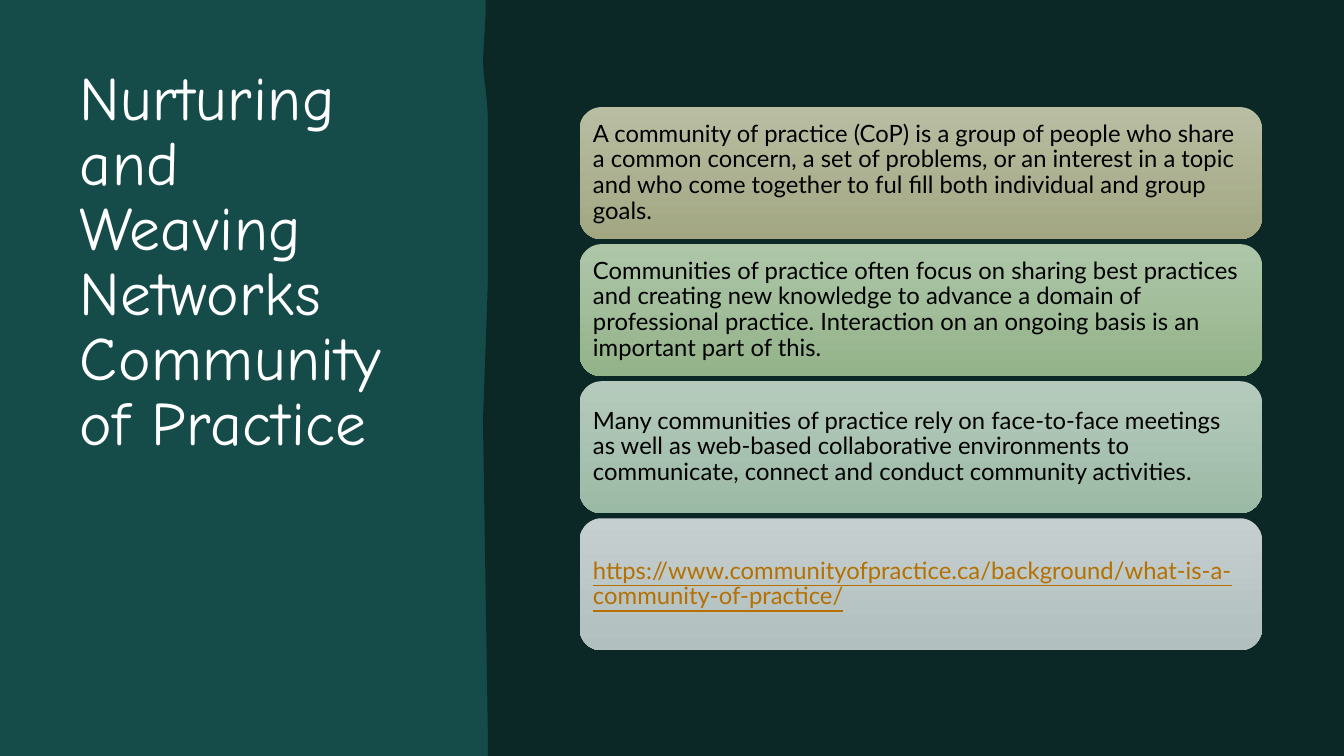
from pptx import Presentation
from pptx.dml.color import RGBColor
from pptx.enum import shapes, text
from pptx.util import Pt

WIDTH, HEIGHT = 960, 540
DARK, TEAL, WHITE, BLACK, LINK = "0B2827", "154C4A", "FFFFFF", "000000", "B57001"

# Wavy left edge of the dark area, from bottom to top: offset from its left side, y
EDGE = [(3.5, 540), (3.5, 525), (0, 300), (3.5, 202), (3.5, 85),
        (3, 74), (1.8, 63), (0.5, 52), (0, 43), (2, 8)]

# Wording, gradient top, gradient bottom, text colour
CARDS = [
    ("A community of practice (CoP) is a group of people who share a common concern, "
     "a set of problems, or an interest in a topic and who come together to ful fill "
     "both individual and group goals.", "B9BDA2", "A2A782", BLACK),
    ("Communities of practice often focus on sharing best practices and creating new "
     "knowledge to advance a domain of professional practice. Interaction on an ongoing "
     "basis is an important part of this.", "AEC6A8", "93B38A", BLACK),
    ("Many communities of practice rely on face-to-face meetings as well as web-based "
     "collaborative environments to communicate, connect and conduct community "
     "activities.", "B5CABC", "9BBAA5", BLACK),
    ("https://www.communityofpractice.ca/background/what-is-a-community-of-practice/",
     "C6CFCF", "B1BFBF", LINK),
]


def rgb(value):
    return RGBColor.from_string(value)


def paint(shape, color):
    shape.shadow.inherit = False
    shape.fill.solid()
    shape.fill.fore_color.rgb = rgb(color)
    shape.line.fill.background()


def write(shape, wording, font, size, color, spacing, inset):
    frame = shape.text_frame
    frame.word_wrap = True
    frame.margin_left = frame.margin_right = Pt(inset)
    frame.margin_top = frame.margin_bottom = Pt(inset)
    paragraph = frame.paragraphs[0]
    paragraph.text = wording
    paragraph.alignment = text.PP_ALIGN.LEFT
    paragraph.line_spacing = spacing
    paragraph.font.name = font
    paragraph.font.size = Pt(size)
    paragraph.font.color.rgb = rgb(color)
    return paragraph


def add_backdrop(slide, left, top, width, height, dark_left):
    # Teal base
    base = slide.shapes.add_shape(shapes.MSO_SHAPE.RECTANGLE,
                                  Pt(left), Pt(top), Pt(width), Pt(height))
    paint(base, TEAL)

    # Dark area with the wavy edge
    right, bottom = left + width, top + height
    outline = [(right, top), (right, bottom)]
    outline += [(dark_left + dx, top + y) for dx, y in EDGE]
    builder = slide.shapes.build_freeform(Pt(dark_left + 2), Pt(top))
    builder.add_line_segments([(Pt(x), Pt(y)) for x, y in outline], close=True)
    paint(builder.convert_to_shape(), DARK)


def add_title(slide, left, top, width, height):
    title = slide.shapes.add_textbox(Pt(left), Pt(top), Pt(width), Pt(height))
    paragraph = write(title, "Nurturing and Weaving Networks Community of Practice",
                      "Comic Neue", 44, WHITE, 0.88, 0)
    # Letter spacing, in hundredths of a point
    paragraph.runs[0]._r.get_or_add_rPr().set("spc", "40")


def add_cards(slide, left, top, width, height, gap):
    card_height = (height - gap * (len(CARDS) - 1)) / len(CARDS)
    for row, (wording, light, deep, color) in enumerate(CARDS):
        card = slide.shapes.add_shape(
            shapes.MSO_SHAPE.ROUNDED_RECTANGLE,
            Pt(left), Pt(top + row * (card_height + gap)), Pt(width), Pt(card_height))
        paint(card, light)

        # Top-to-bottom gradient
        card.fill.gradient()
        card.fill.gradient_angle = 270
        for stop, shade in zip(card.fill.gradient_stops, (light, deep)):
            stop.color.rgb = rgb(shade)

        card.text_frame.vertical_anchor = text.MSO_ANCHOR.MIDDLE
        paragraph = write(card, wording, "Lato", 17, color, 0.9, 5)
        if color == LINK:
            paragraph.font.underline = True


def main():
    deck = Presentation()
    deck.slide_width, deck.slide_height = Pt(WIDTH), Pt(HEIGHT)
    slide = deck.slides.add_slide(deck.slide_layouts[6])
    slide.background.fill.solid()
    slide.background.fill.fore_color.rgb = rgb(DARK)

    add_backdrop(slide, 0, 0, WIDTH, HEIGHT, dark_left=345)
    add_title(slide, 57, 49, 245, 434)
    add_cards(slide, 414, 76.5, 487.5, 388, gap=3.6)
    deck.save("out.pptx")


if __name__ == "__main__":
    main()
